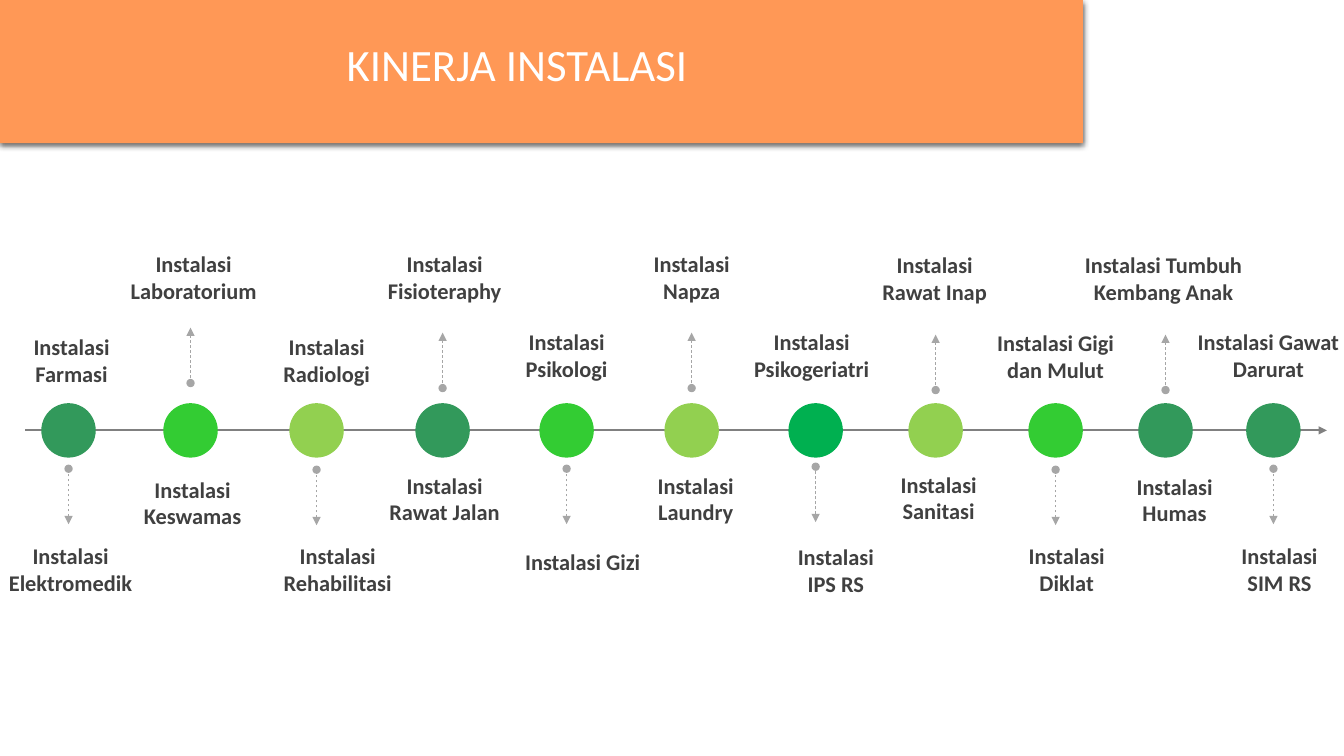
from dataclasses import dataclass

from lxml.etree import SubElement
from pptx import Presentation
from pptx.dml.color import RGBColor
from pptx.enum.dml import MSO_LINE
from pptx.enum.shapes import MSO_CONNECTOR, MSO_SHAPE
from pptx.enum.text import MSO_ANCHOR, MSO_AUTO_SIZE, PP_ALIGN
from pptx.oxml.ns import qn
from pptx.util import Inches, Pt


@dataclass(frozen=True)
class Theme:
    font: str = "Calibri"
    title_size: int = 32
    label_size: int = 16
    banner: str = "FF9856"
    title: str = "FFFFFF"
    label: str = "404040"
    axis: str = "808080"
    arrow: str = "A6A6A6"
    pine: str = "32995B"
    green: str = "33CC33"
    lime: str = "92D050"
    emerald: str = "00B050"


THEME = Theme()
COLS, ROWS = 13.33, 7.5
CELL = Inches(1)
DOT, ARROW, LABEL_H = 0.54, 0.55, 0.54

# stop: centre, colour, signed gap from axis to arrow, labels
# label: text, shift from the stop, top measured from the axis, width
STOPS = [
    (0.68, THEME.pine, 0.38,
     [("Instalasi Farmasi", 0.03, -0.96, 0.97), ("Instalasi Elektromedik", 0.02, 1.11, 1.3)]),
    (1.89, THEME.green, -0.47,
     [("Instalasi Laboratorium", 0.03, -1.79, 1.41), ("Instalasi Keswamas", 0.02, 0.45, 1.3)]),
    (3.14, THEME.lime, 0.39,
     [("Instalasi Radiologi", 0.1, -0.96, 0.97), ("Instalasi Rehabilitasi", 0.21, 1.11, 1.3)]),
    (4.39, THEME.pine, -0.42,
     [("Instalasi Fisioteraphy", 0.02, -1.79, 1.15), ("Instalasi Rawat Jalan", 0.02, 0.41, 1.3)]),
    (5.62, THEME.green, 0.38,
     [("Instalasi Psikologi", 0, -1.01, 0.97), ("Instalasi Gizi", 0.16, 1.17, 1.3)]),
    (6.86, THEME.lime, -0.42,
     [("Instalasi Napza", 0, -1.79, 0.97), ("Instalasi Laundry", 0.04, 0.41, 1.3)]),
    (8.09, THEME.emerald, 0.36,
     [("Instalasi Psikogeriatri", -0.04, -1.01, 1.15), ("Instalasi\nIPS RS", 0.2, 1.12, 1.56)]),
    (9.28, THEME.lime, -0.4,
     [("Instalasi Rawat Inap", -0.01, -1.78, 1.35), ("Instalasi Sanitasi", 0.03, 0.4, 1.3)]),
    (10.47, THEME.green, 0.39,
     [("Instalasi Gigi dan Mulut", 0, -1, 1.34), ("Instalasi Diklat", 0.11, 1.11, 1.3)]),
    (11.56, THEME.pine, -0.4,
     [("Instalasi Tumbuh Kembang Anak", -0.02, -1.78, 1.67), ("Instalasi Humas", 0.09, 0.42, 0.97)]),
    (12.63, THEME.pine, 0.38,
     [("Instalasi Gawat Darurat", -0.05, -1.01, 1.6), ("Instalasi SIM RS", 0.06, 1.11, 0.97)]),
]


def grid(*cells):
    return [round(c * CELL) for c in cells]


def add_text(s, text, box, *, size, color, bold=False, spacing=None, inset=None, grow=False):
    tf = s.shapes.add_textbox(*grid(*box)).text_frame
    tf.word_wrap = True
    tf.vertical_anchor = MSO_ANCHOR.TOP
    if grow:
        tf.auto_size = MSO_AUTO_SIZE.SHAPE_TO_FIT_TEXT
    if inset is not None:
        tf.margin_left = tf.margin_right = tf.margin_top = tf.margin_bottom = inset
    for i, line in enumerate(text.split("\n")):
        p = tf.add_paragraph() if i else tf.paragraphs[0]
        p.alignment = PP_ALIGN.CENTER
        p.line_spacing = spacing
        r = p.add_run()
        r.text = line
        r.font.name = THEME.font
        r.font.size = Pt(size)
        r.font.bold = bold
        r.font.color.rgb = RGBColor.from_string(color)


def add_solid(s, kind, box, color):
    sp = s.shapes.add_shape(kind, *grid(*box))
    sp.shadow.inherit = False
    sp.fill.solid()
    sp.fill.fore_color.rgb = RGBColor.from_string(color)
    sp.line.fill.background()
    return sp


def add_line(s, tip, end, color, width, dash=None, dot=False):
    sp = s.shapes.add_connector(MSO_CONNECTOR.STRAIGHT, *grid(*tip, *end))
    sp.line.color.rgb = RGBColor.from_string(color)
    sp.line.width = Pt(width)
    if dash:
        sp.line.dash_style = dash
    ln = sp.line._get_or_add_ln()
    SubElement(ln, qn("a:headEnd"), type="triangle")
    if dot:
        SubElement(ln, qn("a:tailEnd"), type="oval")
    SubElement(sp._element.spPr, qn("a:effectLst"))


def add_shadow(sp, color, alpha, blur, dist):
    effects = sp._element.spPr.find(qn("a:effectLst"))
    shadow = SubElement(effects, qn("a:outerShdw"), blurRad=str(Pt(blur)), dist=str(Pt(dist)),
                        dir="5400000", algn="t", rotWithShape="0")
    clr = SubElement(shadow, qn("a:srgbClr"), val=color)
    SubElement(clr, qn("a:alpha"), val=str(alpha * 1000))


def banner(s, box, title):
    x, y, w, h = box
    add_shadow(add_solid(s, MSO_SHAPE.RECTANGLE, box, THEME.banner), "000000", 63, 4.5, 1.5)
    add_text(s, title, (x + 2.81, y + 0.38, 4.64, h - 0.69),
             size=THEME.title_size, color=THEME.title, spacing=0.9)


def stop(s, x, axis, color, gap, labels):
    start = axis + gap
    tip = start + (ARROW if gap > 0 else -ARROW)
    add_line(s, (x, tip), (x, start), THEME.arrow, 0.5, MSO_LINE.DASH, dot=True)
    add_solid(s, MSO_SHAPE.OVAL, (x - DOT / 2, axis - DOT / 2, DOT, DOT), color)
    for text, shift, top, w in labels:
        add_text(s, text, (x + shift - w / 2, axis + top, w, LABEL_H),
                 size=THEME.label_size, color=THEME.label, bold=True, inset=0, grow=True)


def timeline(s, box, stops):
    x, y, w, h = box
    axis = y + h / 2
    add_line(s, (x + w - 0.17, axis), (x + 0.25, axis), THEME.axis, 1.5)
    for center, color, gap, labels in stops:
        stop(s, x + center, axis, color, gap, labels)


def main():
    prs = Presentation()
    prs.slide_width, prs.slide_height = grid(COLS, ROWS)
    s = prs.slides.add_slide(prs.slide_layouts[6])
    banner(s, (0, 0, 10.74, 1.42), "KINERJA INSTALASI")
    timeline(s, (0, 2.47, COLS, 3.6), STOPS)
    prs.save("out.pptx")


if __name__ == "__main__":
    main()
